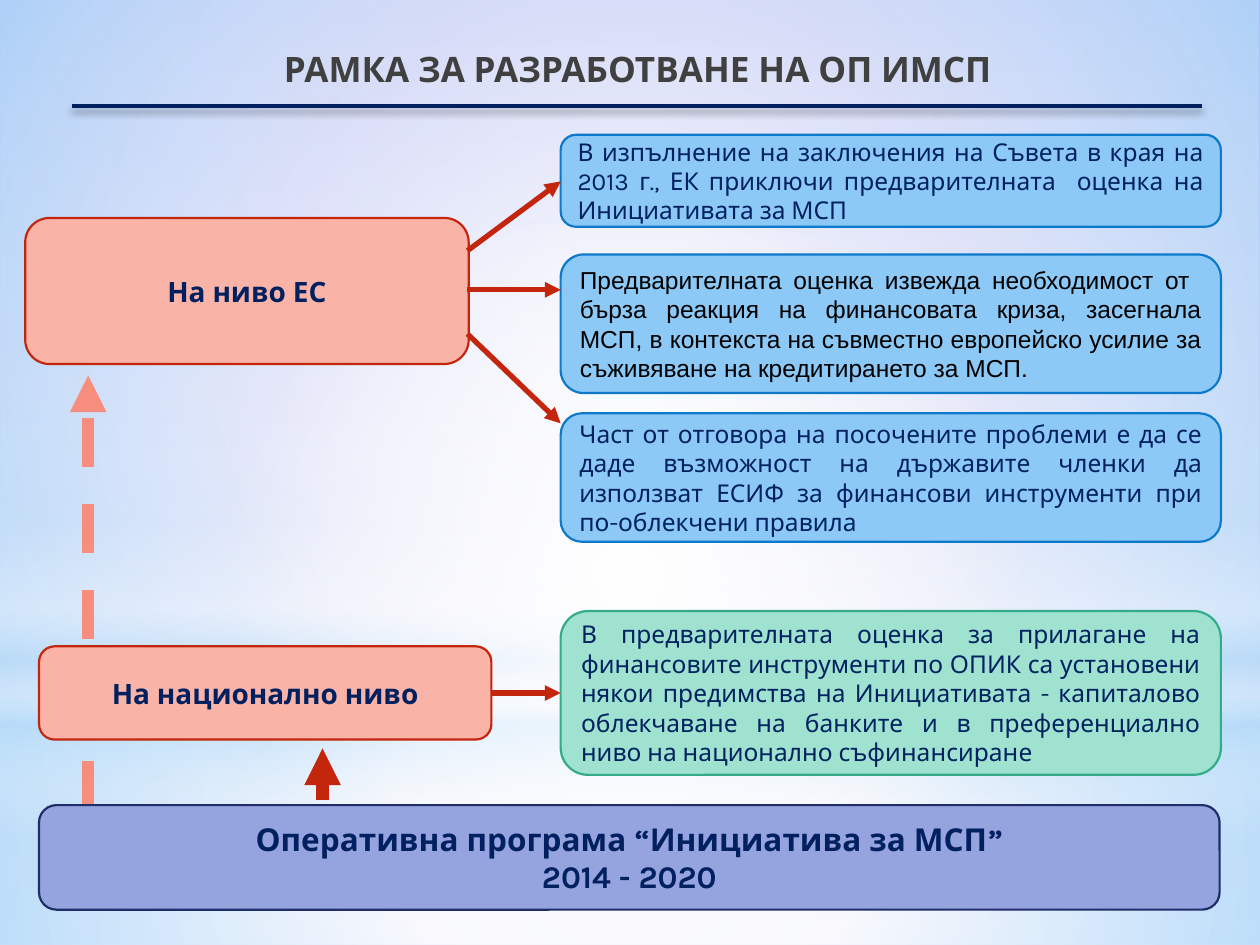
import pptx
import pptx.util
import pptx.dml.color
import pptx.enum.dml
import pptx.enum.shapes
import pptx.enum.text
import pptx.oxml.ns
from lxml import etree

qn = pptx.oxml.ns.qn
SHAPE = pptx.enum.shapes.MSO_SHAPE
ALIGN = pptx.enum.text.PP_ALIGN
ANCHOR = pptx.enum.text.MSO_ANCHOR

COLORS = {
    "white": "FFFFFF", "sky": "B4DCFA", "black": "000000",
    "navy": "002060", "title": "404040",
    "red": "C3260C", "pink": "F9B3A7", "coral": "F78D7C",
    "blue": "8CC9F7", "blue_line": "0D79CA",
    "green": "9EE2CF", "green_line": "34AC8B",
    "violet": "95A4DE", "violet_line": "1F2E69",
    "base_top": "98A4ED", "base_mid": "C1C7F2", "base_low": "E1E3F8",
}
PX_PER_INCH = 100


def px(n):
    return pptx.util.Emu(n * 914400 // PX_PER_INCH)


def rgb(name):
    return pptx.dml.color.RGBColor.from_string(COLORS[name])


def add_color(parent, name, alpha):
    clr = etree.SubElement(parent, qn("a:srgbClr"), val=COLORS[name])
    etree.SubElement(clr, qn("a:alpha"), val=str(alpha * 1000))


class Deck:
    font = "Karla"

    def __init__(self, width, height):
        self.prs = pptx.Presentation()
        self.prs.slide_width, self.prs.slide_height = px(width), px(height)
        self.s = self.prs.slides.add_slide(self.prs.slide_layouts[5])

    def gradient(self, fill, owner, stops, radial):
        fill.gradient()
        grad = next(owner.iter(qn("a:gradFill")))
        grad.clear()
        gs_list = etree.SubElement(grad, qn("a:gsLst"))
        for pos, name, alpha in stops:
            gs = etree.SubElement(gs_list, qn("a:gs"), pos=str(pos * 1000))
            add_color(gs, name, alpha)
        if radial:
            circle = etree.SubElement(grad, qn("a:path"), {"path": "circle"})
            etree.SubElement(circle, qn("a:fillToRect"),
                             dict.fromkeys("ltrb", "50000"))
        else:
            etree.SubElement(grad, qn("a:lin"), ang="5400000", scaled="0")

    def background(self, stops):
        self.gradient(self.s.background.fill, self.s._element, stops, False)

    def glow(self, kind, box, stops, radial=True):
        sp = self.s.shapes.add_shape(kind, *map(px, box))
        sp.shadow.inherit = False
        sp.line.fill.background()
        self.gradient(sp.fill, sp._element, stops, radial)

    def set_text(self, tf, text, size, color, bold, align, font=None, before=0):
        tf.word_wrap = True
        tf.text = text
        for p in tf.paragraphs:
            p.alignment = align
            p.space_before = pptx.util.Pt(before)
            f = p.font
            f.name, f.size, f.bold = font or self.font, pptx.util.Pt(size), bold
            f.color.rgb = rgb(color)

    def title(self, box, text):
        sp = self.s.shapes.title
        sp.left, sp.top, sp.width, sp.height = map(px, box)
        self.set_text(sp.text_frame, text, 20, "title", True, ALIGN.CENTER)
        sp.text_frame.vertical_anchor = ANCHOR.BOTTOM
        self.s.shapes._spTree.append(sp._element)

    def box(self, box, fill, line, text, size, color="navy", bold=False,
            align=ALIGN.JUSTIFY, font=None, before=0):
        sp = self.s.shapes.add_shape(SHAPE.ROUNDED_RECTANGLE, *map(px, box))
        sp.shadow.inherit = False
        sp.fill.solid()
        sp.fill.fore_color.rgb = rgb(fill)
        sp.line.color.rgb = rgb(line)
        sp.line.width = pptx.util.Pt(1.25)
        sp.text_frame.vertical_anchor = ANCHOR.MIDDLE
        self.set_text(sp.text_frame, text, size, color, bold, align, font, before)

    def label(self, box, fill, line, text, size):
        self.box(box, fill, line, text, size, bold=True, align=ALIGN.CENTER)

    def line(self, start, end, color, width, arrow=True, dash=False, shadow=False):
        cx = self.s.shapes.add_connector(
            pptx.enum.shapes.MSO_CONNECTOR.STRAIGHT, *map(px, start + end))
        cx.line.color.rgb = rgb(color)
        cx.line.width = pptx.util.Pt(width)
        if dash:
            cx.line.dash_style = pptx.enum.dml.MSO_LINE.DASH
        sp_pr = cx._element.spPr
        if arrow:
            etree.SubElement(sp_pr.find(qn("a:ln")), qn("a:tailEnd"), type="triangle")
        effects = etree.SubElement(sp_pr, qn("a:effectLst"))
        if shadow:
            shade = etree.SubElement(effects, qn("a:outerShdw"), blurRad="50800",
                                     dist="38100", dir="5400000", rotWithShape="0")
            add_color(shade, "black", 40)


def main():
    d = Deck(1000, 750)
    d.background([(0, "base_top", 100), (50, "base_mid", 100), (100, "base_low", 100)])
    d.glow(SHAPE.RECTANGLE, (0, 558, 1000, 192),
           [(0, "white", 91), (37, "white", 76), (100, "sky", 79)])
    d.glow(SHAPE.RECTANGLE, (0, 0, 1000, 558),
           [(0, "white", 89), (48, "white", 62), (100, "sky", 79)])
    d.glow(SHAPE.RECTANGLE, (0, 412, 1000, 250),
           [(0, "white", 0), (29, "white", 30), (45, "sky", 40),
            (55, "white", 26), (65, "sky", 60), (100, "white", 0)], radial=False)
    d.glow(SHAPE.OVAL, (0, 175, 1000, 558), [(0, "white", 100), (56, "white", 0)])

    d.line((57, 84), (954, 84), "navy", 2.25, arrow=False, shadow=True)
    d.title((57, 5, 898, 71), "РАМКА ЗА РАЗРАБОТВАНЕ НА ОП ИМСП")

    d.line((70, 643), (70, 298), "coral", 7, dash=True)
    d.label((31, 639, 937, 83), "violet", "violet_line",
            "Оперативна програма “Инициатива за МСП”\n2014 - 2020", 18)
    d.label((20, 173, 352, 116), "pink", "red", "На ниво ЕС", 16)
    d.label((31, 513, 359, 74), "pink", "red", "На национално ниво", 16)
    d.line((256, 635), (256, 594), "red", 7)

    left, width = 445, 524
    d.box((left, 485, width, 130), "green", "green_line",
          "В предварителната оценка за прилагане на финансовите инструменти по ОПИК "
          "са установени някои предимства на Инициативата - капиталово облекчаване на "
          "банките и в преференциално ниво на национално съфинансиране", 14)
    d.box((left, 107, width, 73), "blue", "blue_line",
          "В изпълнение на заключения на Съвета в края на 2013 г., ЕК приключи "
          "предварителната  оценка на Инициативата за МСП", 14)
    d.box((left, 202, width, 110), "blue", "blue_line",
          "Предварителната оценка извежда необходимост от  бърза реакция на "
          "финансовата криза, засегнала МСП, в контекста на съвместно европейско "
          "усилие за съживяване на кредитирането за МСП.", 14,
          color="black", font="Arial", before=3)
    d.box((left, 328, width, 102), "blue", "blue_line",
          "Част от отговора на посочените проблеми е да се даде възможност на "
          "държавите членки да използват ЕСИФ за финансови инструменти при "
          "по-облекчени правила", 14)

    for x, y, end_y in ((371, 199, 144), (371, 230, 230), (371, 265, 336), (390, 550, 550)):
        d.line((x, y), (left, end_y), "red", 3)

    d.prs.save("out.pptx")


if __name__ == "__main__":
    main()
